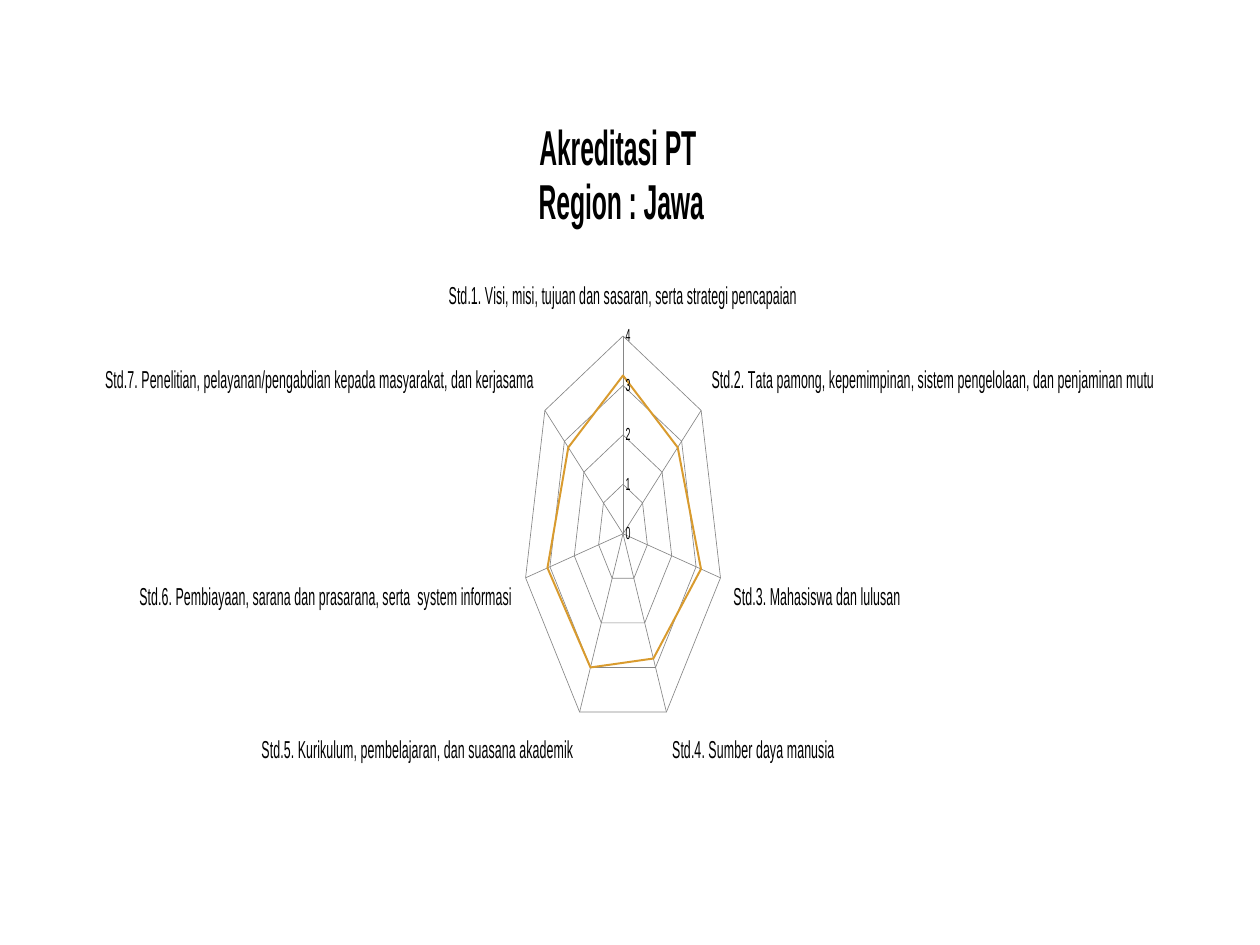
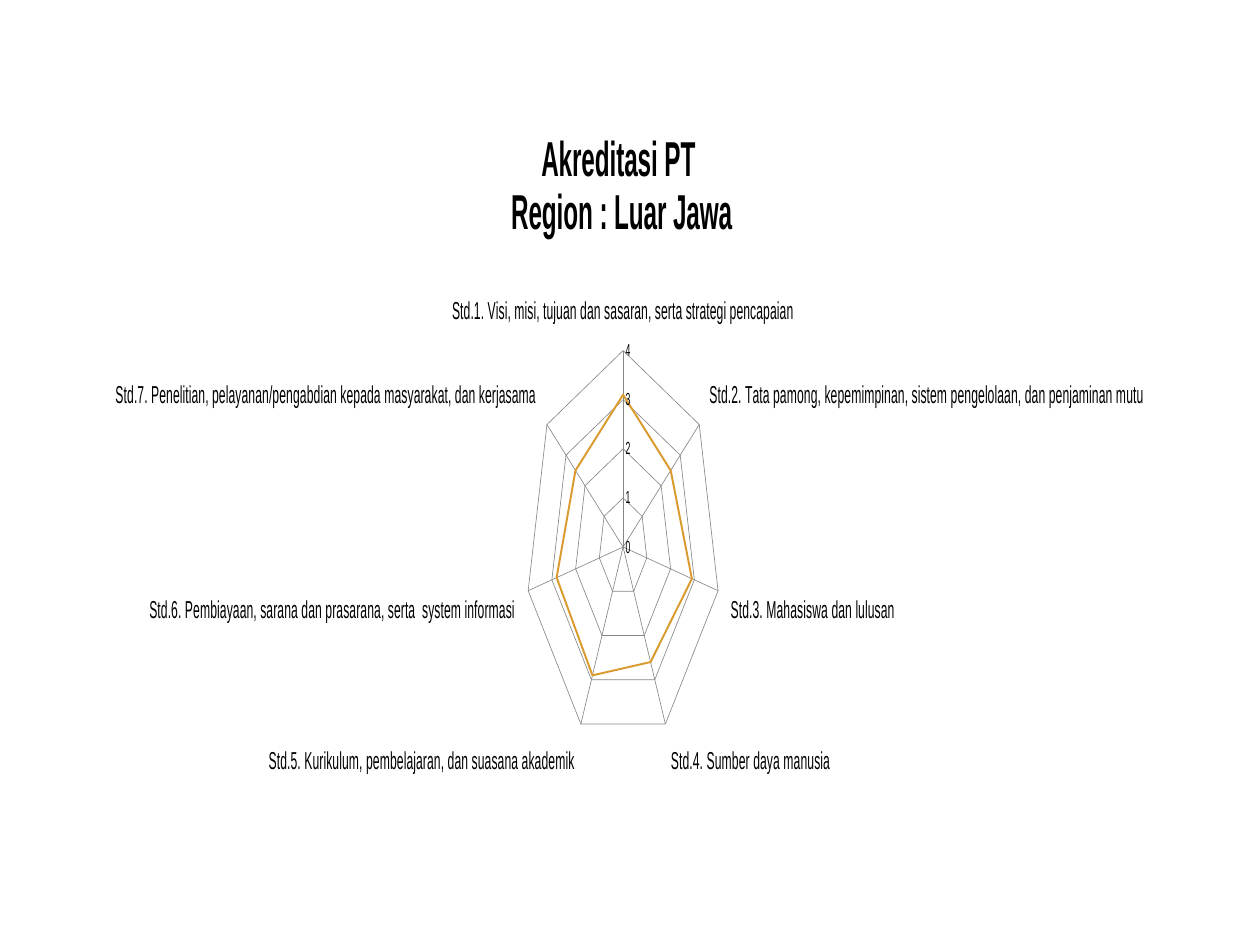
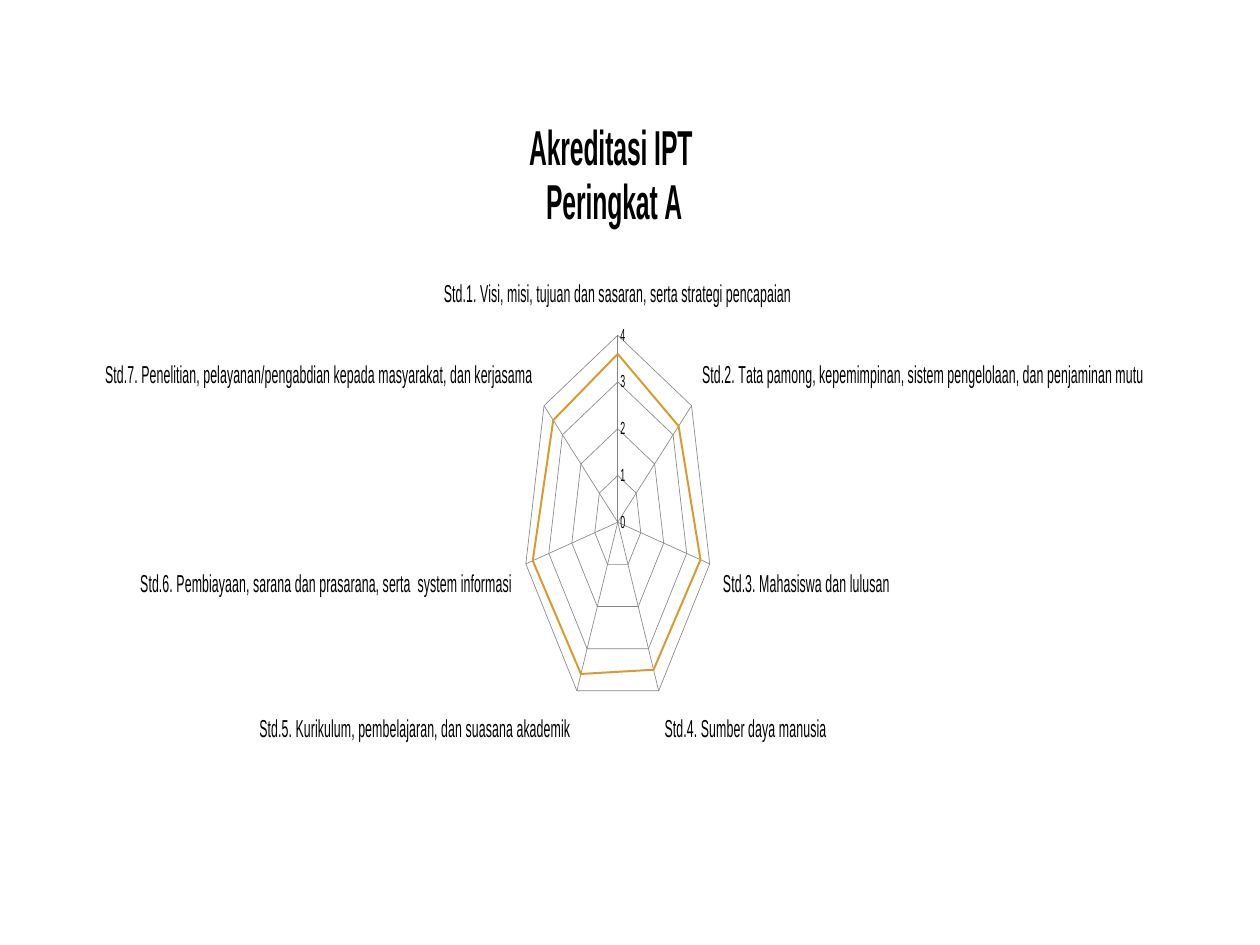
from pptx import Presentation
from pptx import util as u
from pptx.chart import data as cd
from pptx.dml import color as dc
from pptx.enum import chart as ec
from pptx.oxml import parse_xml
from pptx.oxml import ns

COLUMNS, ROWS = 120, 90
STANDARDS = [
    "Std.1. Visi, misi, tujuan dan sasaran, serta strategi pencapaian",
    "Std.2. Tata pamong, kepemimpinan, sistem pengelolaan, dan penjaminan mutu",
    "Std.3. Mahasiswa dan lulusan",
    "Std.4. Sumber daya manusia",
    "Std.5. Kurikulum, pembelajaran, dan suasana akademik",
    "Std.6. Pembiayaan, sarana dan prasarana, serta  system informasi",
    "Std.7. Penelitian, pelayanan/pengabdian kepada masyarakat, dan kerjasama",
]

# Title, frame in grid units, plot area as shares of the frame, scores
SLIDES = [
    ("Akreditasi PT \nRegion : Jawa", (10, 9, 100, 71),
     (0.315, 0.324, 0.377, 0.531), (3.2, 2.8, 3.2, 2.8, 3, 3.1, 2.8)),
    ("Akreditasi PT \nRegion : Luar Jawa", (11, 10, 98, 70),
     (0.312, 0.334, 0.382, 0.535), (3.1, 2.5, 2.9, 2.6, 2.9, 2.8, 2.5)),
    ("Akreditasi IPT \nPeringkat A", (10, 9, 99, 71),
     (0.327, 0.302, 0.36, 0.544), (3.6, 3.3, 3.6, 3.5, 3.6, 3.7, 3.5)),
]


def rgb(value):
    return dc.RGBColor.from_string(value)


def set_all(target, **values):
    for name, value in values.items():
        setattr(target, name, value)


class Deck:
    FONT, TEXT, GRID, SERIES = "Arial", "000000", "868686", "D99B2E"

    def __init__(self):
        self.prs = Presentation()
        set_all(self.prs, slide_width=u.Inches(10), slide_height=u.Inches(7.5))
        self.s = None

    def add_slide(self):
        self.s = self.prs.slides.add_slide(self.prs.slide_layouts[6])

    def box(self, left, top, width, height):
        col, row = self.prs.slide_width / COLUMNS, self.prs.slide_height / ROWS
        return [round(v) for v in (left * col, top * row, width * col, height * row)]

    def font(self, font, size, bold=False):
        set_all(font, name=self.FONT, size=u.Pt(size), bold=bold)
        font.color.rgb = rgb(self.TEXT)

    def line(self, line, color, width):
        line.color.rgb = rgb(color)
        line.width = u.Pt(width)

    def radar(self, title, frame, plot, scores):
        data = cd.CategoryChartData()
        data.categories = STANDARDS
        data.add_series("Series 1", scores)
        chart = self.s.shapes.add_chart(
            ec.XL_CHART_TYPE.RADAR, *self.box(*frame), data).chart
        chart.has_legend = False
        self.font(chart.font, 10)
        self.chart_title(chart, title)
        self.axes(chart)
        self.place_plot(chart, plot)
        chart.plots[0].vary_by_categories = False
        series = chart.plots[0].series[0]
        series.smooth = False
        series.marker.style = ec.XL_MARKER_STYLE.NONE
        self.line(series.format.line, self.SERIES, 2.25)

    def chart_title(self, chart, title):
        tf = chart.chart_title.text_frame
        tf.text = title
        for p in tf.paragraphs:
            self.font(p.font, 28, True)
            for r in p.runs:
                self.font(r.font, 28, True)
        chart.chart_title.include_in_layout = False

    def axes(self, chart):
        for axis, size in ((chart.category_axis, 14), (chart.value_axis, 10)):
            set_all(axis, has_major_gridlines=True,
                    major_tick_mark=ec.XL_TICK_MARK.NONE,
                    minor_tick_mark=ec.XL_TICK_MARK.NONE)
            self.font(axis.tick_labels.font, size)
            self.line(axis.major_gridlines.format.line, self.GRID, 0.75)
            self.line(axis.format.line, self.GRID, 0.75)
            set_all(axis.tick_labels, number_format="General",
                    number_format_is_linked=False)
        set_all(chart.value_axis, minimum_scale=0, maximum_scale=4, major_unit=1)

    def place_plot(self, chart, plot):
        area = chart.plots[0]._element.getparent()
        for old in area.findall(ns.qn("c:layout")):
            area.remove(old)
        sizes = "".join(f'<c:{tag} val="{v}"/>' for tag, v in zip("xywh", plot))
        area.insert(0, parse_xml(
            f'<c:layout {ns.nsdecls("c")}><c:manualLayout>'
            '<c:layoutTarget val="inner"/><c:xMode val="edge"/><c:yMode val="edge"/>'
            f'{sizes}</c:manualLayout></c:layout>'))


def main():
    deck = Deck()
    for content in SLIDES:
        deck.add_slide()
        deck.radar(*content)
    deck.prs.save("out.pptx")


if __name__ == "__main__":
    main()
